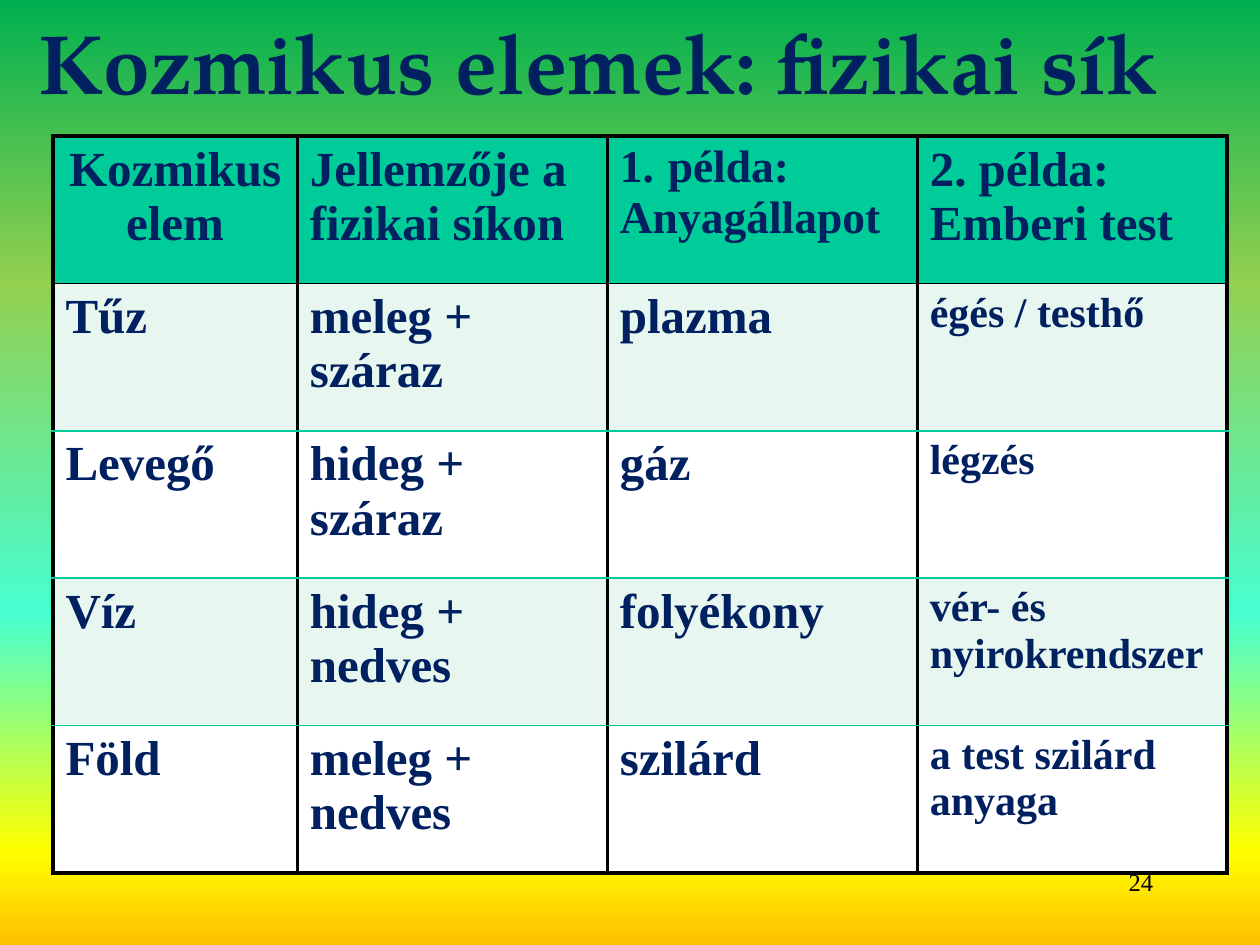
from dataclasses import dataclass

import pptx
import pptx.dml.color
import pptx.enum.text
import pptx.oxml
import pptx.oxml.ns
import pptx.util
from pptx.util import Inches

COLORS = {"navy": "002060", "black": "000000", "teal": "00CC99",
          "mint": "E7F6EF", "white": "FFFFFF"}
BACKGROUND = [(0, "00B050"), (30, "92D050"), (65, "47FFD1"),
              (90, "FFFF00"), (100, "FFC000")]
SERIF = "Times New Roman"
NS = pptx.oxml.ns.nsdecls("a")
ALIGN = pptx.enum.text.PP_ALIGN
ANCHOR = pptx.enum.text.MSO_ANCHOR


@dataclass
class Label:
    text: str
    left: float
    top: float
    width: float
    height: float
    font: dict
    color: str
    align: ALIGN
    anchor: ANCHOR


@dataclass
class Entry:
    lines: list[str]
    size: int = 28
    align: ALIGN = ALIGN.LEFT
    numbered: bool = False


def rgb(name: str) -> pptx.dml.color.RGBColor:
    return pptx.dml.color.RGBColor.from_string(COLORS[name])


def add_run(p, text: str, font: dict, color: str) -> None:
    r = p.add_run()
    r.text = text
    for key, value in font.items():
        setattr(r.font, key, value)
    r.font.color.rgb = rgb(color)


def paint_background(s) -> None:
    s.background.fill.gradient()
    grad = s.element.xpath(".//p:bgPr/a:gradFill")[0]
    stops = "".join(f'<a:gs pos="{pos * 1000}"><a:srgbClr val="{color}"/></a:gs>'
                    for pos, color in BACKGROUND)
    for child in list(grad):
        grad.remove(child)
    grad.append(pptx.oxml.parse_xml(f"<a:gsLst {NS}>{stops}</a:gsLst>"))
    grad.append(pptx.oxml.parse_xml(f'<a:lin {NS} ang="5400000" scaled="0"/>'))


def add_label(s, label: Label) -> None:
    sp = s.shapes.add_textbox(Inches(label.left), Inches(label.top),
                              Inches(label.width), Inches(label.height))
    tf = sp.text_frame
    tf.word_wrap = True
    tf.vertical_anchor = label.anchor
    p = tf.paragraphs[0]
    p.alignment = label.align
    add_run(p, label.text, label.font, label.color)


def set_border(cell, side: str, color: str, width: float) -> None:
    cell._tc.get_or_add_tcPr().append(pptx.oxml.parse_xml(
        f'<a:ln{side} {NS} w="{pptx.util.Pt(width)}"><a:solidFill>'
        f'<a:srgbClr val="{COLORS[color]}"/></a:solidFill></a:ln{side}>'))


def number_paragraph(p) -> None:
    pPr = p._p.get_or_add_pPr()
    pPr.set("marL", str(Inches(0.38)))
    pPr.set("indent", str(-Inches(0.38)))
    pPr.append(pptx.oxml.parse_xml(f'<a:buFont {NS} typeface="+mj-lt"/>'))
    pPr.append(pptx.oxml.parse_xml(f'<a:buAutoNum {NS} type="arabicPeriod"/>'))


def fill_cell(cell, entry: Entry, fill: str, top: tuple, bottom: tuple) -> None:
    side = ("black", 2.25)
    for name, border in (("L", side), ("R", side), ("T", top), ("B", bottom)):
        set_border(cell, name, *border)
    cell.fill.solid()
    cell.fill.fore_color.rgb = rgb(fill)
    font = {"name": SERIF, "size": pptx.util.Pt(entry.size), "bold": True}
    tf = cell.text_frame
    for i, line in enumerate(entry.lines):
        p = tf.paragraphs[0] if i == 0 else tf.add_paragraph()
        p.alignment = entry.align
        if entry.numbered and i == 0:
            number_paragraph(p)
        add_run(p, line, font, "navy")


def add_elements_table(s, rows: list[list[Entry]]) -> None:
    widths, row_height = [1.94, 2.46, 2.46, 2.46], 1.17
    table = s.shapes.add_table(
        len(rows), len(widths), Inches(0.42), Inches(1.08),
        Inches(sum(widths)), Inches(row_height * len(rows))).table
    for column, width in zip(table.columns, widths):
        column.width = Inches(width)
    # Horizontal rules from the top edge down to the bottom edge
    outer, inner = ("black", 2.25), ("teal", 1)
    rules = [outer, ("black", 1)] + [inner] * (len(rows) - 2) + [outer]
    for i, row in enumerate(rows):
        table.rows[i].height = Inches(row_height)
        fill = "teal" if i == 0 else ("mint" if i % 2 else "white")
        for j, entry in enumerate(row):
            fill_cell(table.cell(i, j), entry, fill, rules[i], rules[i + 1])


HEADER = [
    Entry(["Kozmikus elem"], align=ALIGN.CENTER),
    Entry(["Jellemzője a fizikai síkon"]),
    Entry(["példa:", "Anyagállapot"], size=26, numbered=True),
    Entry(["2. példa:", "Emberi test"]),
]
# Element, its two qualities, state of matter, part of the human body
ELEMENTS = [
    ("Tűz", ["meleg +", "száraz"], "plazma", "égés / testhő"),
    ("Levegő", ["hideg +", "száraz"], "gáz", "légzés"),
    ("Víz", ["hideg +", "nedves"], "folyékony", "vér- és nyirokrendszer"),
    ("Föld", ["meleg +", "nedves"], "szilárd", "a test szilárd anyaga"),
]
TITLE = Label("Kozmikus elemek: fizikai sík", -0.25, 0.04, 10, 0.88,
              {"name": "TeX Gyre Pagella", "size": pptx.util.Pt(48), "bold": True},
              "navy", ALIGN.CENTER, ANCHOR.MIDDLE)
PAGE_NUMBER = Label("24", 7.17, 6.83, 2.08, 0.5,
                    {"name": SERIF, "size": pptx.util.Pt(14)},
                    "black", ALIGN.RIGHT, ANCHOR.TOP)


def main() -> None:
    prs = pptx.Presentation()
    prs.slide_width, prs.slide_height = Inches(10), Inches(7.5)
    s = prs.slides.add_slide(prs.slide_layouts[6])
    paint_background(s)

    # Title, table and page number
    add_label(s, TITLE)
    body = [[Entry([element]), Entry(qualities), Entry([state]), Entry([part], size=24)]
            for element, qualities, state, part in ELEMENTS]
    add_elements_table(s, [HEADER] + body)
    add_label(s, PAGE_NUMBER)
    prs.save("out.pptx")


if __name__ == "__main__":
    main()
